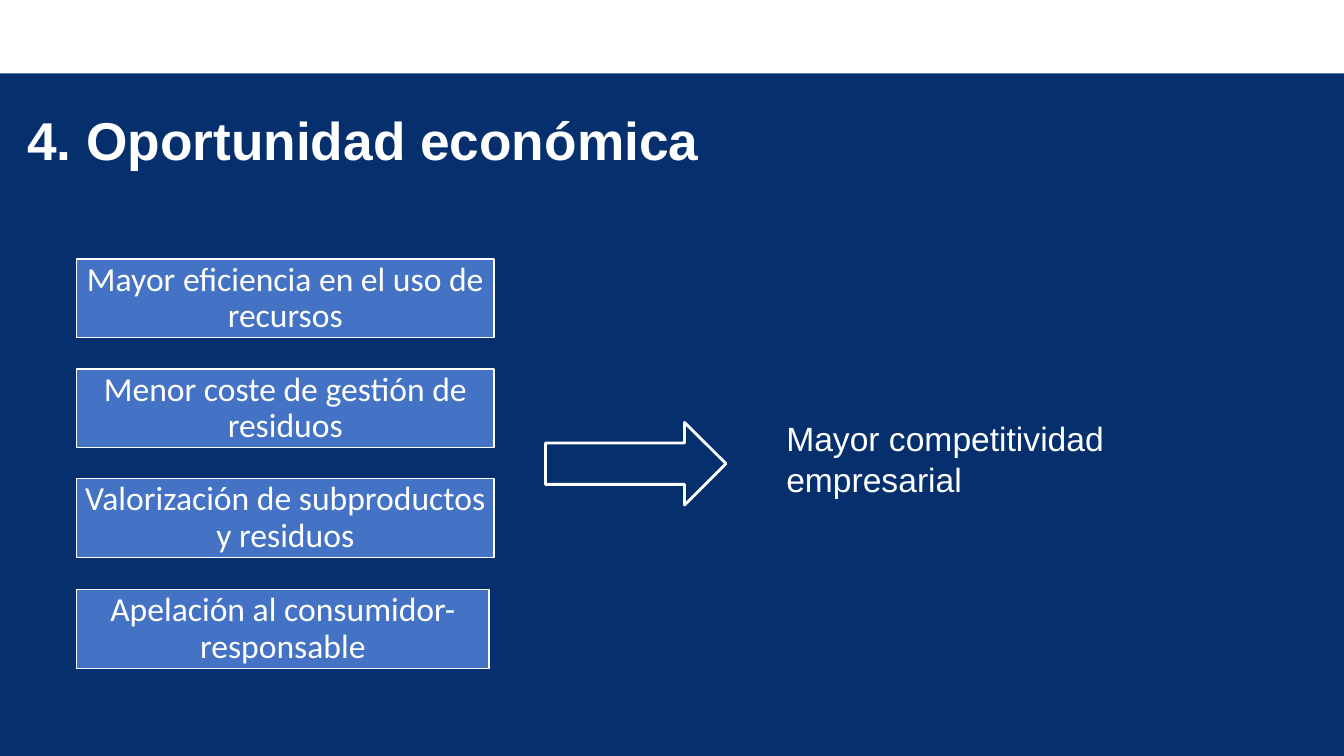
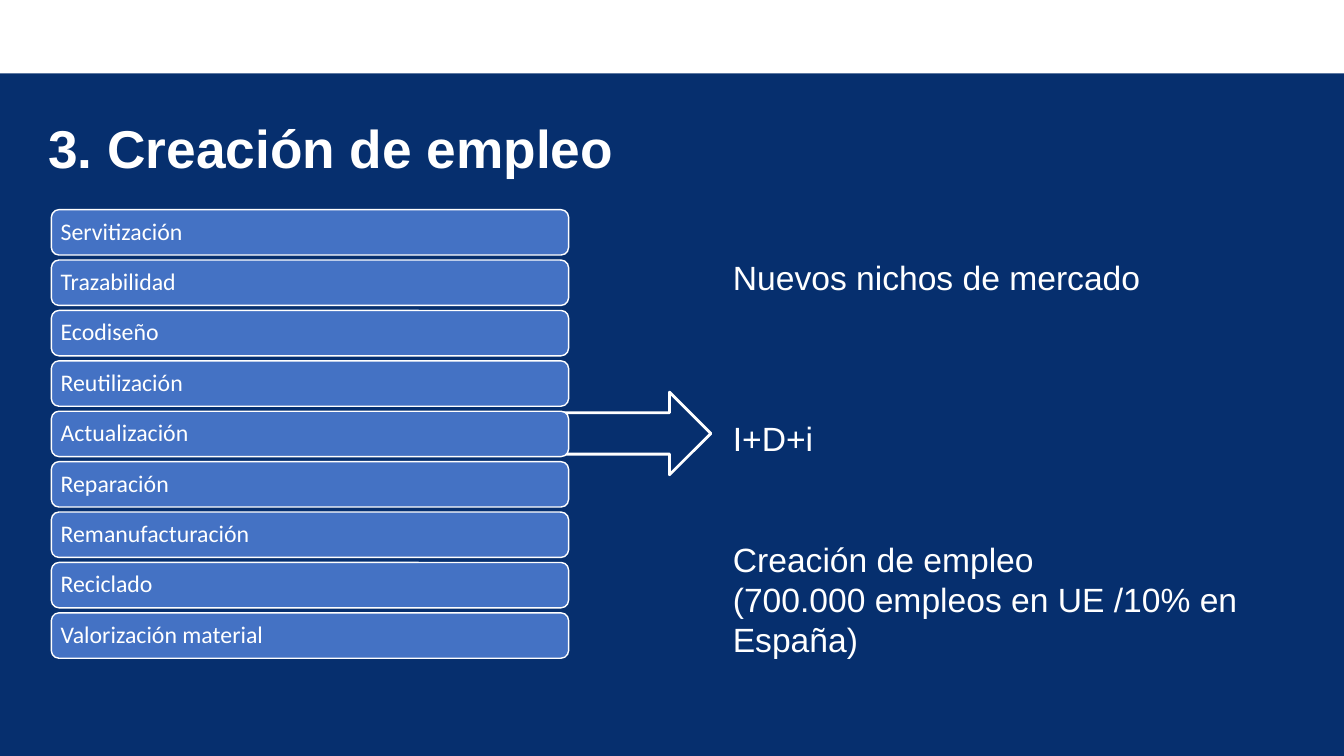
from pptx import Presentation
from pptx.dml.color import RGBColor
from pptx.enum.shapes import MSO_SHAPE as Preset
from pptx.enum.text import MSO_ANCHOR as Anchor, MSO_AUTO_SIZE as AutoSize, PP_ALIGN as Align
from pptx.util import Emu, Pt

SLIDE_WIDTH, SLIDE_HEIGHT = 1333, 750
NAVY, BLUE, WHITE = "062F6E", "4472C4", "FFFFFF"
HEADING_FONT, BOX_FONT = "Arial", "Calibri"
TITLE_ONLY = 5

OPPORTUNITIES = [
    ("Mayor eficiencia en el uso de recursos", 414),
    ("Menor coste de gestión de residuos", 414),
    ("Valorización de subproductos y residuos", 414),
    ("Apelación al consumidor-responsable", 409),
]
ACTIVITIES = [
    "Servitización", "Trazabilidad", "Ecodiseño", "Reutilización", "Actualización",
    "Reparación", "Remanufacturación", "Reciclado", "Valorización material",
]


def px(length):
    """Turn px, at 100 to the inch, into EMU."""
    return Emu(length * 9144)


def color(hex_string):
    return RGBColor.from_string(hex_string)


def add_run(paragraph, text, size, font, bold=False):
    run = paragraph.add_run()
    run.text = text
    run.font.size = Pt(size)
    run.font.name = font
    run.font.bold = bold
    run.font.color.rgb = color(WHITE)


def add_shape(slide, preset, box, fill=None, line_width=None):
    shape = slide.shapes.add_shape(preset, *map(px, box))
    shape.shadow.inherit = False
    if fill:
        shape.fill.solid()
        shape.fill.fore_color.rgb = color(fill)
    else:
        shape.fill.background()
    if line_width:
        shape.line.color.rgb = color(WHITE)
        shape.line.width = Pt(line_width)
    else:
        shape.line.fill.background()
    return shape


def add_label_box(slide, preset, box, text, size, align, inset):
    shape = add_shape(slide, preset, box, BLUE, 1)
    frame = shape.text_frame
    frame.word_wrap = True
    frame.vertical_anchor = Anchor.MIDDLE
    frame.margin_left = frame.margin_right = px(inset)
    frame.margin_top = frame.margin_bottom = px(2)
    paragraph = frame.paragraphs[0]
    paragraph.alignment = align
    paragraph.line_spacing = 0.9
    add_run(paragraph, text, size, BOX_FONT)


def add_arrow(slide, left, top):
    add_shape(slide, Preset.RIGHT_ARROW, (left, top, 179, 82), line_width=2)


def add_text(slide, box, lines):
    """Add one paragraph for each pair of text and space before in points."""
    frame = slide.shapes.add_textbox(*map(px, box)).text_frame
    frame.word_wrap = True
    for index, (text, space_before) in enumerate(lines):
        paragraph = frame.add_paragraph() if index else frame.paragraphs[0]
        paragraph.space_before = Pt(space_before)
        add_run(paragraph, text, 24, HEADING_FONT)


def add_titled_slide(presentation, title_text, left, top):
    """Add a slide with the shared background, top band and title style."""
    slide = presentation.slides.add_slide(presentation.slide_layouts[TITLE_ONLY])
    slide.background.fill.solid()
    slide.background.fill.fore_color.rgb = color(NAVY)
    add_shape(slide, Preset.RECTANGLE, (0, 0, SLIDE_WIDTH, 73), WHITE)
    title = slide.shapes.title
    title.left, title.top, title.width, title.height = map(px, (left, top, 1258, 109))
    frame = title.text_frame
    frame.word_wrap = True
    frame.auto_size = AutoSize.NONE
    frame.vertical_anchor = Anchor.MIDDLE
    paragraph = frame.paragraphs[0]
    paragraph.alignment = Align.LEFT
    paragraph.line_spacing = 0.9
    add_run(paragraph, title_text, 38, HEADING_FONT, bold=True)
    return slide


def build_opportunity(presentation):
    slide = add_titled_slide(presentation, "4. Oportunidad económica", 17, 88)
    for index, (text, width) in enumerate(OPPORTUNITIES):
        box = (76, 257 + 328 * index // 3, width, 78)
        add_label_box(slide, Preset.RECTANGLE, box, text, 24, Align.CENTER, 2)
    add_arrow(slide, 541, 419)
    add_text(slide, (770, 410, 408, 91), [("Mayor competitividad empresarial", 0)])


def build_employment(presentation):
    slide = add_titled_slide(presentation, "3. Creación de empleo", 38, 96)
    add_text(slide, (717, 250, 545, 444), [
        ("Nuevos nichos de mercado", 0),
        ("I+D+i", 86),
        ("Creación de empleo", 57.5),
        ("(700.000 empleos en UE /10% en España)", 0),
    ])
    add_arrow(slide, 526, 389)
    for index, text in enumerate(ACTIVITIES):
        box = (51, 208 + 50 * index, 513, 45)
        add_label_box(slide, Preset.ROUNDED_RECTANGLE, box, text, 17, Align.LEFT, 7)


def main():
    presentation = Presentation()
    presentation.slide_width = px(SLIDE_WIDTH)
    presentation.slide_height = px(SLIDE_HEIGHT)
    build_opportunity(presentation)
    build_employment(presentation)
    presentation.save("out.pptx")


if __name__ == "__main__":
    main()
